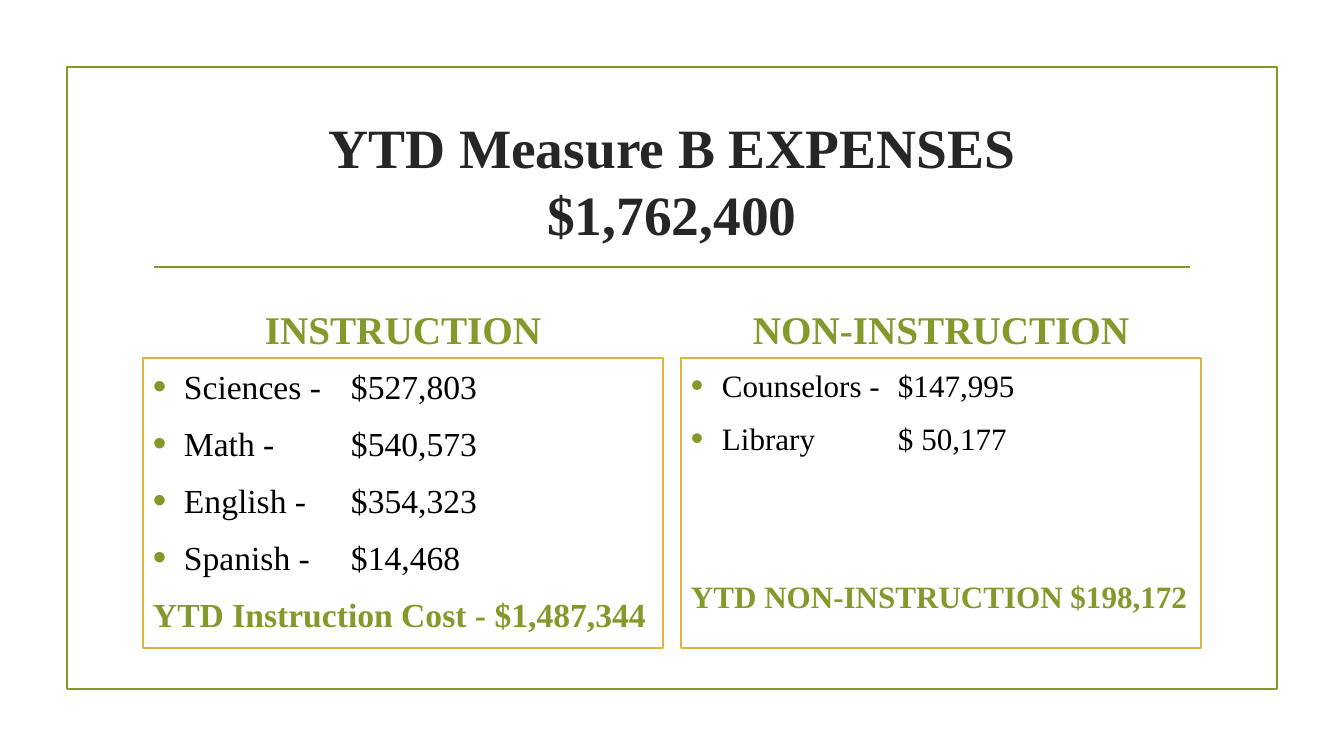
from dataclasses import dataclass

from lxml import etree
from pptx import Presentation
from pptx.dml.color import RGBColor
from pptx.enum.shapes import MSO_CONNECTOR, MSO_SHAPE
from pptx.enum.text import MSO_ANCHOR, MSO_AUTO_SIZE, PP_ALIGN
from pptx.oxml.ns import qn
from pptx.util import Emu, Pt

RECTANGLE = MSO_SHAPE.RECTANGLE
STRAIGHT = MSO_CONNECTOR.STRAIGHT
TOP, MIDDLE, BOTTOM = MSO_ANCHOR.TOP, MSO_ANCHOR.MIDDLE, MSO_ANCHOR.BOTTOM
NO_AUTOFIT = MSO_AUTO_SIZE.NONE
LEFT, CENTER = PP_ALIGN.LEFT, PP_ALIGN.CENTER

COLORS = {
    "olive": "83992A",
    "gold": "DEB340",
    "ink": "262626",
    "black": "000000",
    "white": "FFFFFF",
}
FONT = "Times New Roman"
PX_PER_INCH = 100.8
BULLET_INDENT = 31
PANEL_LEFT, PANEL_STEP, PANEL_WIDTH = 143, 538, 520
ITEM_SPACE_BEFORE = 5.8


@dataclass
class Expense:
    name: str
    amount: str


@dataclass
class ExpensePanel:
    heading: str
    expenses: list[Expense]
    total: str
    size: float
    amount_stop: int
    total_space_before: float


PANELS = [
    ExpensePanel(
        "INSTRUCTION",
        [
            Expense("Sciences -", "$527,803"),
            Expense("Math -", "$540,573"),
            Expense("English -", "$354,323"),
            Expense("Spanish -", "$14,468"),
        ],
        "YTD Instruction Cost - $1,487,344",
        24, 198, ITEM_SPACE_BEFORE,
    ),
    ExpensePanel(
        "NON-INSTRUCTION",
        [Expense("Counselors -", "$147,995"), Expense("Library", "$ 50,177")],
        "YTD NON-INSTRUCTION $198,172",
        22.2, 207, 80,
    ),
]


def px(length: int) -> Emu:
    return Emu(round(length * 914400 / PX_PER_INCH))


def color(name: str) -> RGBColor:
    return RGBColor.from_string(COLORS[name])


def add_text(paragraph, text: str, size: float, tint: str, bold: bool = False) -> None:
    run = paragraph.add_run()
    run.text = text
    run.font.name = FONT
    run.font.size = Pt(size)
    run.font.bold = bold
    run.font.color.rgb = color(tint)


def set_frame(frame, anchor, top_inset: int = 5) -> None:
    frame.word_wrap = True
    frame.auto_size = NO_AUTOFIT
    frame.vertical_anchor = anchor
    frame.margin_left = frame.margin_right = px(10)
    frame.margin_top, frame.margin_bottom = px(top_inset), px(5)


def add_box(slide, left: int, top: int, width: int, height: int, line: str):
    box = slide.shapes.add_shape(RECTANGLE, px(left), px(top), px(width), px(height))
    box.shadow.inherit = False
    box.fill.solid()
    box.fill.fore_color.rgb = color("white")
    box.line.color.rgb = color(line)
    box.line.width = Pt(1.25)
    return box


def add_bullet(paragraph, amount_stop: int) -> None:
    properties = paragraph._p.get_or_add_pPr()
    properties.set("marL", str(px(BULLET_INDENT)))
    properties.set("indent", str(-px(BULLET_INDENT)))
    bullet_color = etree.SubElement(properties, qn("a:buClr"))
    etree.SubElement(bullet_color, qn("a:srgbClr"), val=COLORS["olive"])
    etree.SubElement(properties, qn("a:buSzPct"), val="115000")
    etree.SubElement(properties, qn("a:buFont"), typeface="Arial")
    etree.SubElement(properties, qn("a:buChar"), char="•")
    stops = etree.SubElement(properties, qn("a:tabLst"))
    etree.SubElement(stops, qn("a:tab"), pos=str(px(amount_stop)), algn="l")


def add_title(slide) -> None:
    title = slide.shapes.title
    title.left, title.top, title.width, title.height = px(143), px(108), px(1058), px(144)
    set_frame(title.text_frame, MIDDLE)
    paragraph = title.text_frame.paragraphs[0]
    paragraph.alignment = CENTER
    add_text(paragraph, "YTD Measure B EXPENSES", 39.6, "ink", True)
    paragraph.add_line_break()
    add_text(paragraph, "$1,762,400", 39.6, "ink", True)


def add_rule(slide) -> None:
    rule = slide.shapes.add_connector(STRAIGHT, px(154), px(267), px(1190), px(267))
    rule.line.color.rgb = color("olive")
    rule.line.width = Pt(1.25)
    etree.SubElement(rule._element.spPr, qn("a:effectLst"))


def add_panel(slide, panel: ExpensePanel, left: int) -> None:
    heading = slide.shapes.add_textbox(px(left), px(293), px(PANEL_WIDTH), px(64))
    set_frame(heading.text_frame, BOTTOM)
    heading_line = heading.text_frame.paragraphs[0]
    heading_line.alignment = CENTER
    add_text(heading_line, panel.heading, 28, "olive", True)

    frame = add_box(slide, left, 358, PANEL_WIDTH, 290, "gold").text_frame
    set_frame(frame, TOP, 8)
    for index, expense in enumerate(panel.expenses):
        item = frame.add_paragraph() if index else frame.paragraphs[0]
        add_bullet(item, panel.amount_stop)
        item.alignment = LEFT
        item.space_before = Pt(ITEM_SPACE_BEFORE if index else 0)
        item.space_after = Pt(6)
        add_text(item, f"{expense.name}\t{expense.amount}", panel.size, "black")
    total = frame.add_paragraph()
    total.alignment = LEFT
    total.space_before = Pt(panel.total_space_before)
    add_text(total, panel.total, panel.size, "olive", True)


def main() -> None:
    deck = Presentation()
    deck.slide_width, deck.slide_height = px(1344), px(756)
    slide = deck.slides.add_slide(deck.slide_layouts[5])
    frame = add_box(slide, 67, 67, 1210, 622, "olive")
    slide.shapes._spTree.remove(frame._element)
    slide.shapes._spTree.insert(2, frame._element)
    add_rule(slide)
    add_title(slide)
    for index, panel in enumerate(PANELS):
        add_panel(slide, panel, PANEL_LEFT + index * PANEL_STEP)
    deck.save("out.pptx")


if __name__ == "__main__":
    main()
